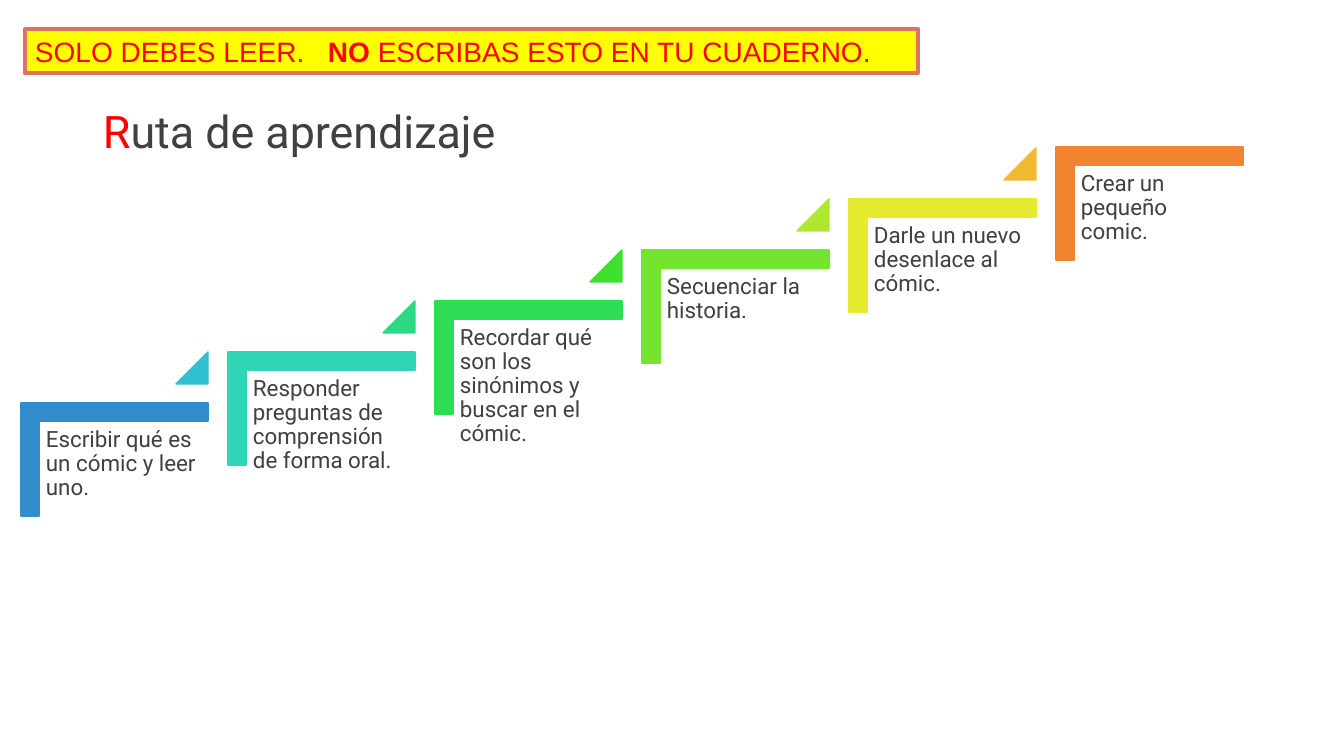
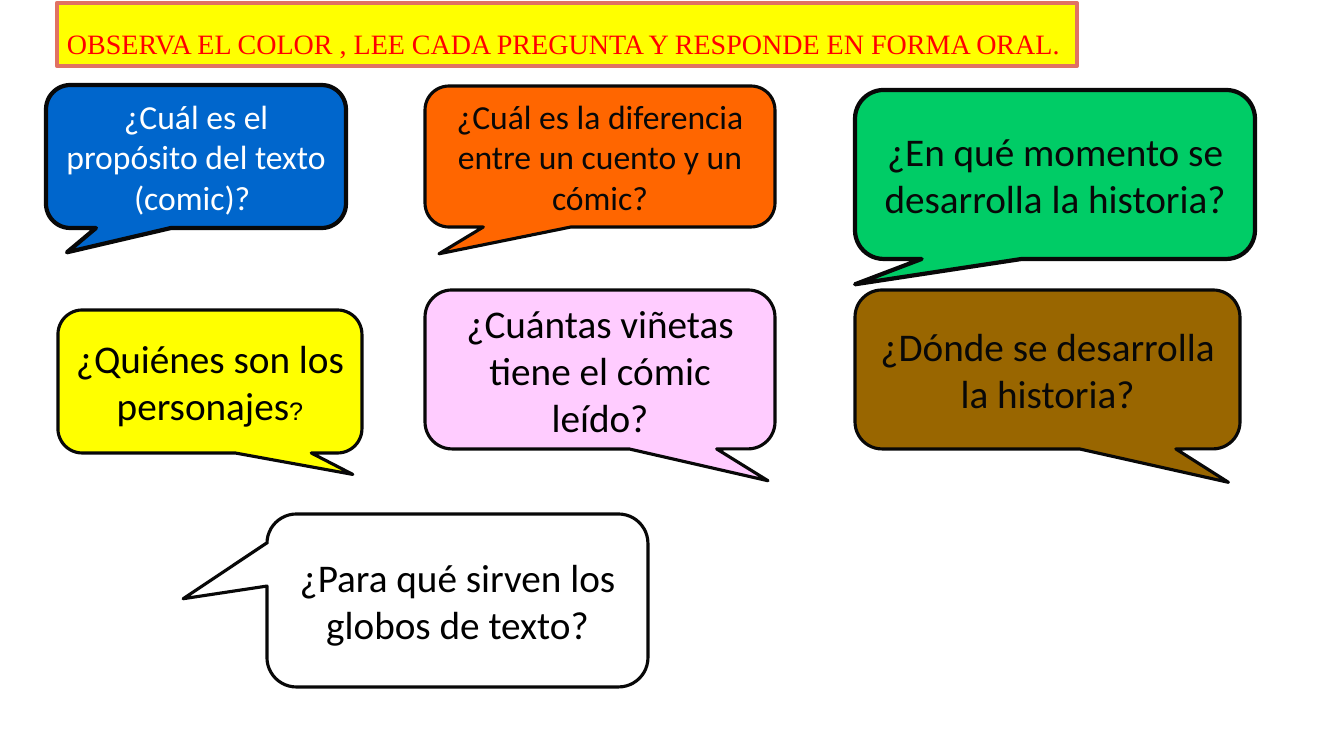
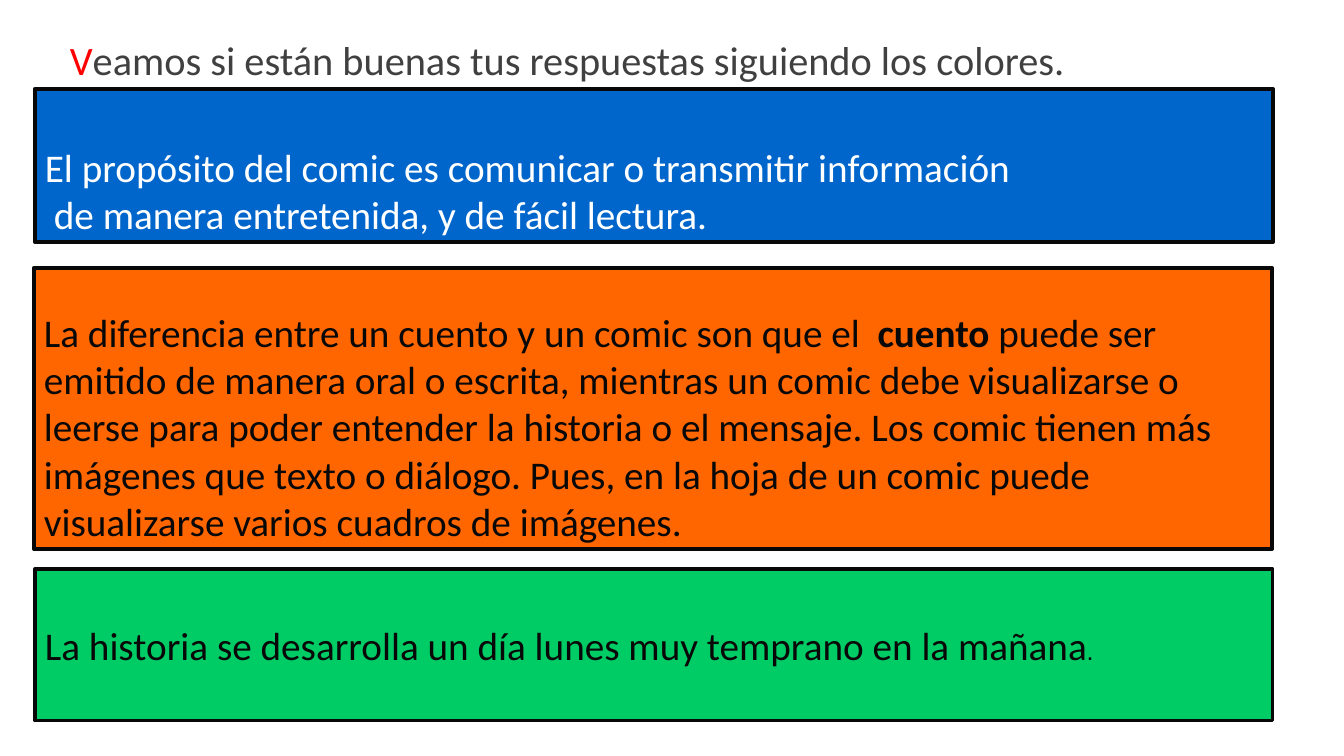
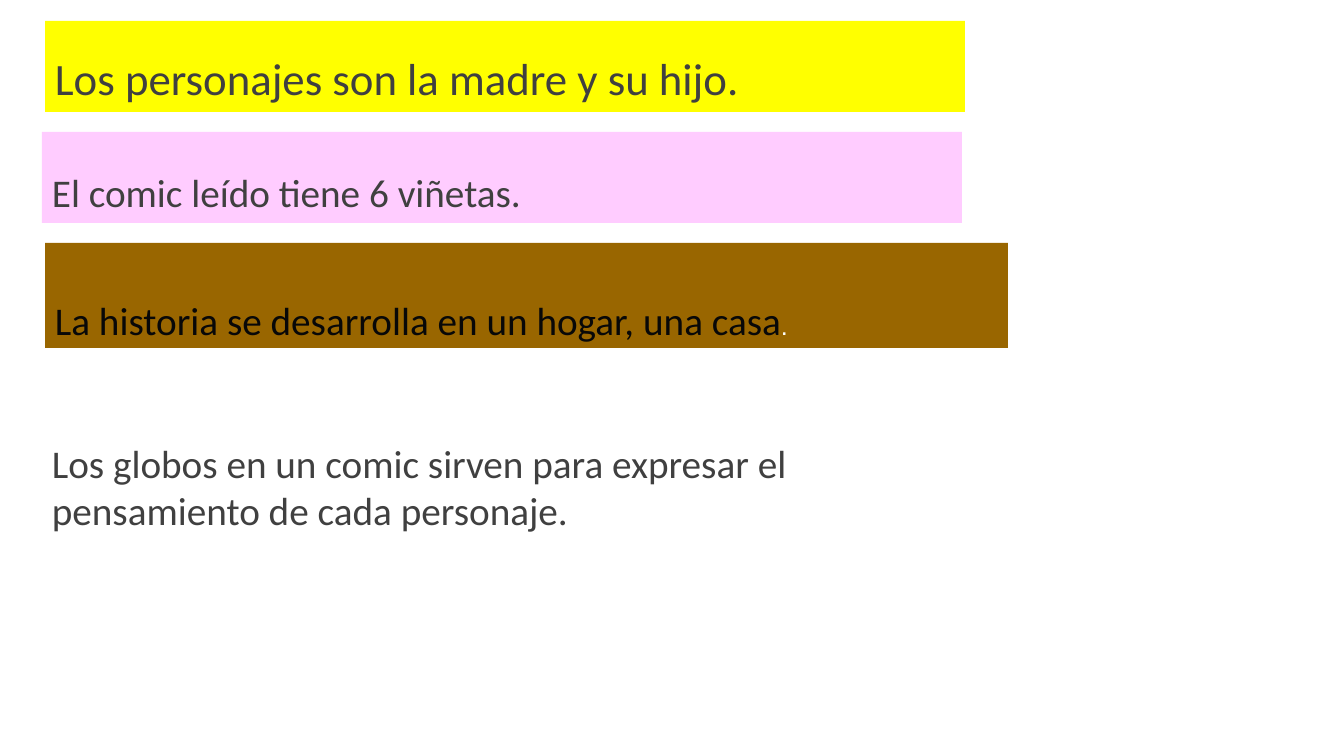
from lxml import etree
from pptx import Presentation
from pptx import util as u
from pptx.dml.color import RGBColor
from pptx.enum import shapes, text
from pptx.oxml.ns import qn

PX = 9071  # EMU in one px
RED = RGBColor(0xFF, 0x00, 0x00)
CORAL = RGBColor(0xE0, 0x72, 0x63)
GREY = RGBColor(0x40, 0x40, 0x40)
INK = RGBColor(0x08, 0x08, 0x08)
BLACK = RGBColor(0x00, 0x00, 0x00)
WHITE = RGBColor(0xFF, 0xFF, 0xFF)
BLUE = RGBColor(0x00, 0x66, 0xCC)
ORANGE = RGBColor(0xFF, 0x66, 0x00)
GREEN = RGBColor(0x00, 0xCC, 0x66)
YELLOW = RGBColor(0xFF, 0xFF, 0x00)
PINK = RGBColor(0xFF, 0xCC, 0xFF)
BROWN = RGBColor(0x99, 0x66, 0x00)

KIND = shapes.MSO_SHAPE
LEFT, CENTER = text.PP_ALIGN.LEFT, text.PP_ALIGN.CENTER
TOP, MIDDLE, BOTTOM = (text.MSO_ANCHOR.TOP, text.MSO_ANCHOR.MIDDLE,
                       text.MSO_ANCHOR.BOTTOM)


def block(slide, box, kind=None, fill=None, line=None, weight=1, adjust=()):
    """Add a preset shape, or a text box when no kind is given."""
    place = [length * PX for length in box]
    if kind is None:
        return slide.shapes.add_textbox(*place)
    shape = slide.shapes.add_shape(kind, *place)
    shape.shadow.inherit = False
    shape.fill.solid()
    shape.fill.fore_color.rgb = fill
    if line is None:
        shape.line.fill.background()
    else:
        shape.line.color.rgb = line
        shape.line.width = u.Pt(weight)
    for index, value in enumerate(adjust):
        shape.adjustments[index] = value
    return shape


def write(shape, *paragraphs, size=28, font="Calibri", color=GREY, align=LEFT,
          anchor=BOTTOM, spacing=1.0, inset=None, bottom=5):
    """Fill a shape; each paragraph is a list of (words, run format) pairs."""
    frame = shape.text_frame
    frame.word_wrap = True
    frame.vertical_anchor = anchor
    frame.margin_bottom = bottom * PX
    if inset is not None:
        frame.margin_left = frame.margin_right = inset * PX
        frame.margin_top = frame.margin_bottom = inset * PX
    for index, runs in enumerate(paragraphs):
        paragraph = frame.add_paragraph() if index else frame.paragraphs[0]
        paragraph.alignment = align
        paragraph.line_spacing = spacing
        for words, look in runs:
            run = paragraph.add_run()
            run.text = words
            run.font.size = u.Pt(look.get("size", size))
            run.font.name = look.get("font", font)
            run.font.color.rgb = look.get("color", color)
            run.font.bold = look.get("bold", False)
    return frame


prs = Presentation()
prs.slide_width, prs.slide_height = 1344 * PX, 756 * PX
route, questions, answers, more_answers = [
    prs.slides.add_slide(prs.slide_layouts[6]) for _ in range(4)]
banner_look = dict(kind=KIND.RECTANGLE, fill=YELLOW, line=CORAL, weight=3)
small_stop = dict(size=18, font="Arial")

# Slide 1: title and staircase
write(block(route, (93, 44, 1084, 119)),
      [("R", {"color": RED}), ("uta de aprendizaje", {})],
      size=32, font="Roboto", spacing=0.9)

steps = [
    ("Escribir qué es un cómic y leer uno.", "318DCB", "2FC0D1"),
    ("Responder preguntas de comprensión de forma oral.", "2FD5B5", "2ED985"),
    ("Recordar qué son los sinónimos y buscar en el cómic.", "2EDD53", "3DE12E"),
    ("Secuenciar la historia.", "74E42E", "ADE82F"),
    ("Darle un nuevo desenlace al cómic.", "E7EB2F", "EFBA2F"),
    ("Crear un pequeño comic.", "F28330", None),
]
for index, (task, stair_hex, marker_hex) in enumerate(steps):
    across, up = 207 * index, 256 * index // 5
    stair_color = RGBColor.from_string(stair_hex)
    stair = block(route, (58 + across, 366 - up, 113, 187), KIND.CORNER,
                  stair_color, stair_color, adjust=(0.16, 0.16))
    stair.rotation = 90
    write(block(route, (39 + across, 421 - up, 169, 148)), [(task, {})],
          size=16, font="Roboto", anchor=TOP, spacing=0.9, inset=7)
    if marker_hex:
        marker_color = RGBColor.from_string(marker_hex)
        block(route, (176 + across, 352 - up, 32, 32), KIND.ISOSCELES_TRIANGLE,
              marker_color, marker_color, adjust=(1,))

# Slide 1: reading notice, with a tab stop before the stressed word
notice = write(block(route, (25, 29, 893, 44), **banner_look),
               [("SOLO DEBES LEER.\t", {}), ("NO", {"bold": True}),
                (" ESCRIBAS ESTO EN TU CUADERNO.", {})],
               size=20, font="Arial", color=RED, anchor=MIDDLE)
notice_format = notice.paragraphs[0]._p.get_or_add_pPr()
tab_stops = etree.SubElement(notice_format, qn("a:tabLst"))
etree.SubElement(tab_stops, qn("a:tab"), pos=str(293 * PX), algn="l")

# Slide 2: instruction and question balloons
write(block(questions, (57, 3, 1020, 63), **banner_look),
      [("OBSERVA EL COLOR , LEE CADA PREGUNTA Y RESPONDE EN FORMA ORAL.", {})],
      size=20, font="Times New Roman", color=RED, spacing=0.9)

balloons = [
    ((46, 85, 300, 143), (-0.43, 0.67), BLUE, 3, 24, WHITE,
     [("¿Cuál es el propósito del texto (comic)? ", {})]),
    ((425, 86, 350, 141), (-0.46, 0.69), ORANGE, 2.25, 24, INK,
     [("¿Cuál es la diferencia entre un cuento y un cómic?", {})]),
    ((855, 90, 400, 169), (-0.5, 0.65), GREEN, 3, 28, INK,
     [("¿En qué momento se desarrolla la historia?", {})]),
    ((58, 310, 304, 143), (0.47, 0.65), YELLOW, 2.25, 28, BLACK,
     [("¿Quiénes son los personajes", {}), ("?", small_stop)]),
    ((425, 290, 350, 159), (0.48, 0.7), PINK, 2.25, 28, BLACK,
     [("¿Cuántas viñetas tiene el cómic leído?", {})]),
    ((855, 290, 385, 159), (0.47, 0.71), BROWN, 2.25, 28, INK,
     [("¿Dónde se desarrolla la historia?", {})]),
    ((267, 514, 381, 173), (-0.72, -0.01), WHITE, 2.25, 28, BLACK,
     [("¿Para qué sirven los globos de texto?", {})]),
]
for box, tip, fill, weight, size, color, question in balloons:
    balloon = block(questions, box, KIND.ROUNDED_RECTANGULAR_CALLOUT, fill,
                    INK, weight, adjust=(*tip, 0.17))
    write(balloon, question, size=size, color=color, align=CENTER,
          anchor=MIDDLE)

# Slide 3: title and framed answers
write(block(answers, (60, 21, 1163, 68)),
      [("V", {"color": RED}),
       ("eamos si están buenas tus respuestas siguiendo los colores.", {})],
      size=28.8, spacing=0.9)

purpose = write(
    block(answers, (35, 89, 1238, 153), KIND.RECTANGLE, BLUE, INK, 3),
    [("El propósito del comic es comunicar o transmitir información", {})],
    [("de manera entretenida, y de fácil lectura.", {})], color=WHITE)
purpose.paragraphs[1]._p.get_or_add_pPr().set("marL", str(9 * PX))

write(block(answers, (34, 268, 1238, 281), KIND.RECTANGLE, ORANGE, INK, 3),
      [("La diferencia entre un cuento y un comic son que el  ", {}),
       ("cuento", {"bold": True}),
       (" puede ser emitido de manera oral o escrita, mientras un comic debe "
        "visualizarse o leerse para poder entender la historia o el mensaje. "
        "Los comic tienen más imágenes que texto o diálogo. Pues, en la hoja "
        "de un comic puede visualizarse varios cuadros de imágenes.", {})],
      color=INK)

write(block(answers, (35, 569, 1238, 152), KIND.RECTANGLE, GREEN, INK, 2.25),
      [("La historia se desarrolla un día lunes muy temprano en la mañana", {}),
       (".", small_stop)], color=INK, anchor=MIDDLE)

# Slide 4: unframed answers
strips = [
    ((45, 21, 920, 91), YELLOW, 32, GREY, 8,
     [("Los personajes son la madre y su hijo.", {})]),
    ((42, 132, 920, 91), PINK, 28, GREY, 8,
     [("El comic leído tiene 6 viñetas.", {})]),
    ((45, 243, 963, 105), BROWN, 28, INK, 5,
     [("La historia se desarrolla en un hogar, una casa", {}),
      (".", {**small_stop, "color": WHITE})]),
    ((42, 386, 963, 152), WHITE, 28, GREY, 5,
     [("Los globos en un comic sirven para expresar el pensamiento de cada "
       "personaje.", {})]),
]
for box, fill, size, color, bottom, answer in strips:
    write(block(more_answers, box, KIND.RECTANGLE, fill), answer,
          size=size, color=color, bottom=bottom)

prs.save("out.pptx")
